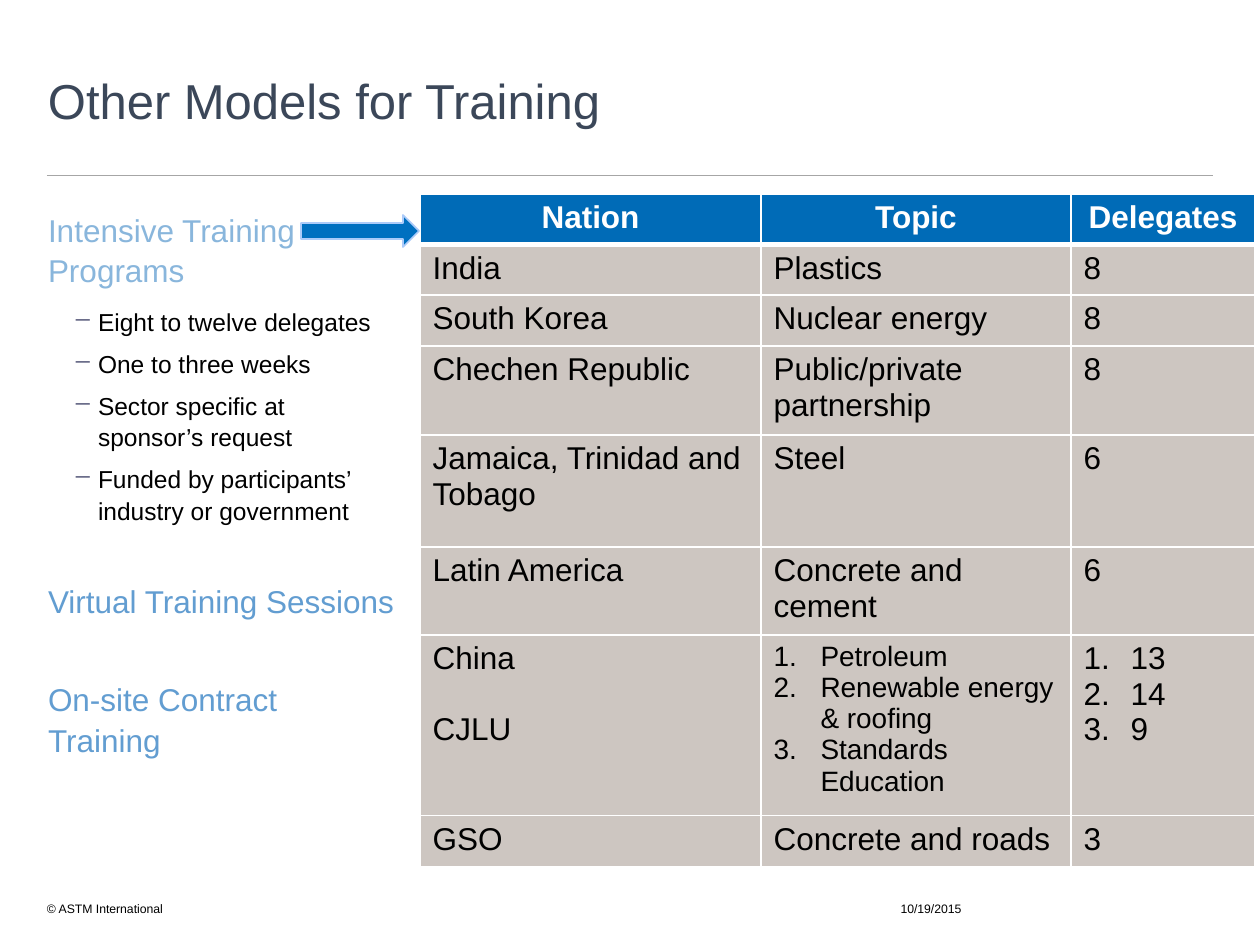
from lxml.etree import SubElement
from pptx import Presentation
from pptx.dml.color import RGBColor
from pptx.enum.shapes import MSO_CONNECTOR, MSO_SHAPE
from pptx.enum.text import MSO_ANCHOR, PP_ALIGN
from pptx.oxml import parse_xml
from pptx.oxml.ns import nsdecls, qn
from pptx.util import Emu, Pt

PX = 914400 / 126
FONT = "Arial"
BLACK = RGBColor(0x00, 0x00, 0x00)
WHITE = RGBColor(0xFF, 0xFF, 0xFF)
SLATE = RGBColor(0x3B, 0x47, 0x59)
RULE_GREY = RGBColor(0xA6, 0xA6, 0xA6)
PALE_BLUE = RGBColor(0x89, 0xB6, 0xDC)
MID_BLUE = RGBColor(0x62, 0x9D, 0xD1)
NAVY = RGBColor(0x24, 0x28, 0x52)
HEADER_BLUE = RGBColor(0x00, 0x6B, 0xB7)
CELL_GREY = RGBColor(0xCD, 0xC6, 0xC1)
ARROW_BLUE = RGBColor(0x00, 0x70, 0xC0)
ARROW_EDGE = RGBColor(0xAC, 0xCB, 0xF9)


def px(*values):
    return [Emu(round(v * PX)) for v in values]


def write(tf, lines, size, color, bold=False):
    """Fill a text frame with one paragraph per line and return the paragraphs."""
    tf.word_wrap = True
    tf.text = "\n".join(lines)
    for p in tf.paragraphs:
        p.font.name, p.font.size, p.font.bold = FONT, Pt(size), bold
        p.font.color.rgb = color
    return tf.paragraphs


prs = Presentation()
prs.slide_width, prs.slide_height = px(1260, 945)
s = prs.slides.add_slide(prs.slide_layouts[6])

# Text boxes
boxes = {}
for name, box in {
    "title": (48, 44, 971, 118),
    "copyright": (47, 901, 142, 16),
    "date": (856, 901, 150, 16),
    "programs": (48, 208, 285, 110),
    "details": (48, 305, 347, 538),
}.items():
    tf = s.shapes.add_textbox(*px(*box)).text_frame
    tf.margin_left = tf.margin_right = tf.margin_top = tf.margin_bottom = 0
    boxes[name] = tf

boxes["title"].vertical_anchor = MSO_ANCHOR.MIDDLE
write(boxes["title"], ["Other Models for Training"], 28, SLATE)[0].line_spacing = Pt(30)
write(boxes["copyright"], ["© ASTM International"], 7, BLACK)
boxes["date"].vertical_anchor = MSO_ANCHOR.MIDDLE
write(boxes["date"], ["10/19/2015"], 7, BLACK)[0].alignment = PP_ALIGN.CENTER
write(boxes["programs"], ["Intensive Training\vPrograms"], 18, PALE_BLUE)[0].line_spacing = 1.07

bullets = ["Eight to twelve delegates", "One to three weeks",
           "Sector specific at sponsor’s request",
           "Funded by participants’ industry or government"]
headings = {"Virtual Training Sessions": 25, "On-site Contract Training": 27}
for p in write(boxes["details"], bullets + list(headings), 14, BLACK):
    p.line_spacing, p.space_after = 1.07, Pt(6)
    if p.text in headings:
        p.space_before = Pt(headings[p.text])
        p.font.size, p.font.color.rgb = Pt(18), MID_BLUE
    else:
        pPr = p._p.get_or_add_pPr()
        pPr.set("marL", str(px(50)[0]))
        pPr.set("indent", str(px(-25)[0]))
        color, bullet = (parse_xml(f"<a:{x} {nsdecls('a')}/>") for x in ("buClr", "buChar"))
        SubElement(color, qn("a:srgbClr"), val=str(NAVY))
        bullet.set("char", "−")
        pPr.insert_element_before(color, "a:buChar", "a:defRPr")
        pPr.insert_element_before(bullet, "a:defRPr")

# Rule under the title
rule = s.shapes.add_connector(MSO_CONNECTOR.STRAIGHT, *px(47, 175, 1213, 175))
rule.line.color.rgb, rule.line.width = RULE_GREY, Pt(0.5)
SubElement(rule._element.spPr, qn("a:effectLst"))

# Table of training programs
rows = [
    ("Nation", "Topic", "Delegates"),
    ("India", "Plastics", "8"),
    ("South Korea", "Nuclear energy", "8"),
    ("Chechen Republic", "Public/private partnership", "8"),
    ("Jamaica, Trinidad and Tobago", "Steel", "6"),
    ("Latin America", "Concrete and cement", "6"),
    ("China\nCJLU", "Petroleum\nRenewable energy & roofing\nStandards Education", "13\n14\n9"),
    ("GSO", "Concrete and roads", "3"),
]
widths = px(341, 310, 184)
heights = px(49, 50, 51, 89, 112, 83, 168, 51)
table = s.shapes.add_table(len(rows), len(widths), *px(420, 194),
                           sum(widths), sum(heights)).table
table.horz_banding = False
for column, width in zip(table.columns, widths):
    column.width = width
for i, (row, height) in enumerate(zip(rows, heights)):
    table.rows[i].height = height
    header = i == 0
    for j, text in enumerate(row):
        cell = table.cell(i, j)
        cell.fill.solid()
        cell.fill.fore_color.rgb = HEADER_BLUE if header else CELL_GREY
        lines = text.split("\n")
        numbered = len(lines) == 3
        size = 16 if numbered and j == 1 else 18
        paragraphs = write(cell.text_frame, lines, size, WHITE if header else BLACK, header)
        for p in paragraphs:
            if header:
                p.alignment = PP_ALIGN.CENTER
            if numbered:
                pPr = p._p.get_or_add_pPr()
                pPr.set("marL", str(px(47)[0]))
                pPr.set("indent", str(px(-47)[0]))
                number = parse_xml(f"<a:buAutoNum {nsdecls('a')} type='arabicPeriod'/>")
                pPr.insert_element_before(number, "a:defRPr")
        if len(lines) == 2:
            paragraphs[1].space_before = Pt(20)
        tcPr = cell._tc.get_or_add_tcPr()
        for k, side in enumerate("LRTB"):
            thick = (side == "B" and header) or (side == "T" and i == 1)
            tcPr.insert(k, parse_xml(
                f"<a:ln{side} {nsdecls('a')} w='{Pt(3 if thick else 1)}'><a:solidFill>"
                f"<a:srgbClr val='{WHITE}'/></a:solidFill></a:ln{side}>"))

# Arrow from the programs to the table
arrow = s.shapes.add_shape(MSO_SHAPE.RIGHT_ARROW, *px(301, 215, 118, 32))
arrow.shadow.inherit = False
arrow.fill.solid()
arrow.fill.fore_color.rgb = ARROW_BLUE
arrow.line.color.rgb, arrow.line.width = ARROW_EDGE, Pt(1)

prs.save("out.pptx")
